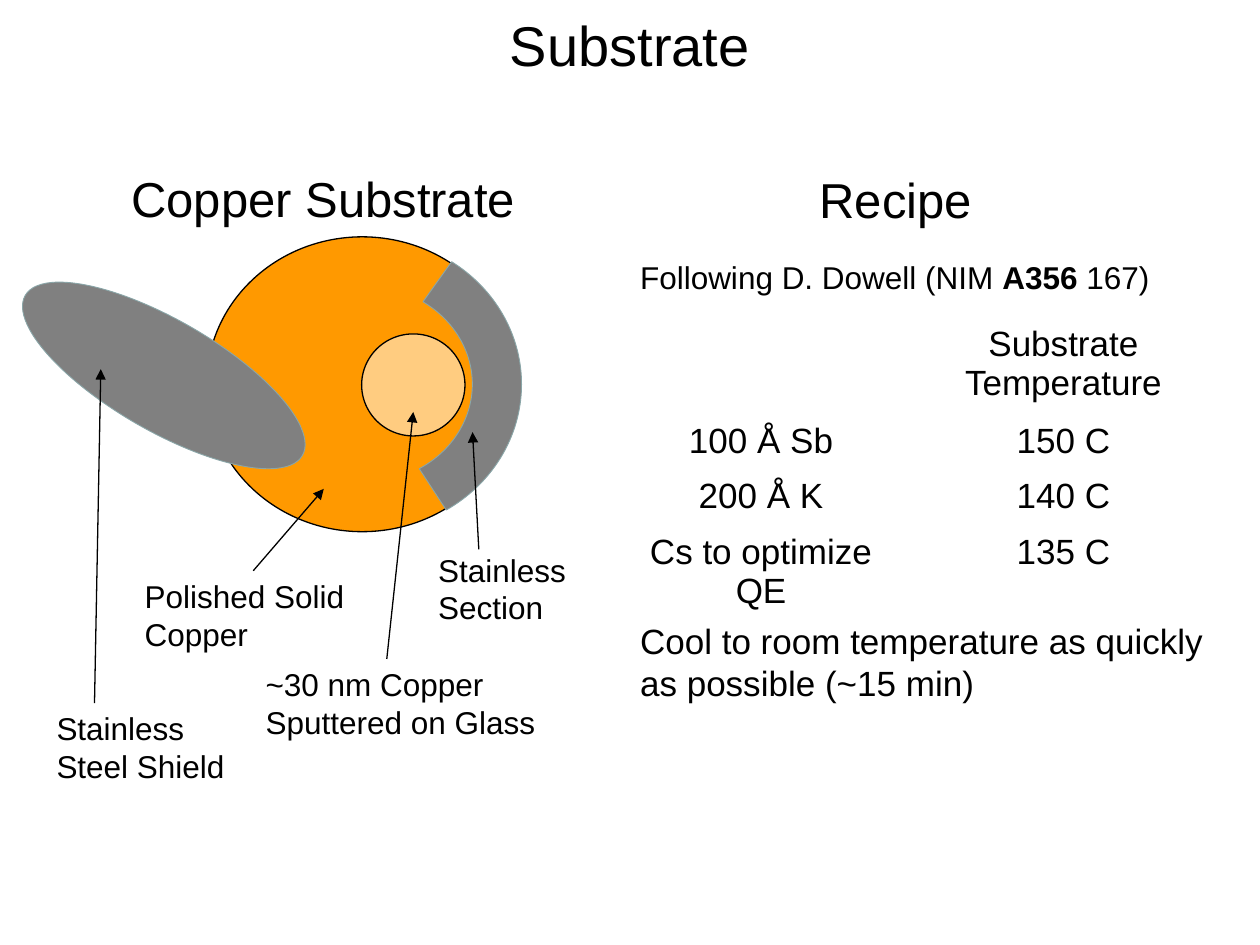
import pptx
import pptx.dml.color
import pptx.enum.shapes
import pptx.enum.text
import pptx.oxml
import pptx.oxml.ns
import pptx.util
from pptx.util import Inches

RGBColor = pptx.dml.color.RGBColor
Shape = pptx.enum.shapes.MSO_SHAPE
Align = pptx.enum.text.PP_ALIGN
Anchor = pptx.enum.text.MSO_ANCHOR

BLACK = RGBColor(0x00, 0x00, 0x00)
WHITE = RGBColor(0xFF, 0xFF, 0xFF)
COPPER = RGBColor(0xFF, 0x99, 0x00)
STEEL = RGBColor(0x80, 0x80, 0x80)
STEEL_EDGE = RGBColor(0x8A, 0xA6, 0xA8)

LABELS = [
    ("Polished Solid Copper", 1.05, 4.53, 1.82),
    ("~30 nm Copper Sputtered on Glass", 2.01, 5.23, 2.46),
    ("Stainless Steel Shield", 0.35, 5.58, 1.82),
    ("Stainless Section", 3.38, 4.32, 1.46),
]
POINTERS = [
    (2.01, 4.53, 2.57, 3.88),
    (3.07, 5.23, 3.28, 3.27),
    (0.75, 5.58, 0.8, 2.93),
    (3.8, 4.36, 3.75, 3.43),
]
RECIPE = [
    ("", "Substrate Temperature"),
    ("100 Å Sb", "150 C"),
    ("200 Å K", "140 C"),
    ("Cs to optimize QE", "135 C"),
]
ROW_HEIGHTS = [0.76, 0.44, 0.44, 0.76]


def format_runs(paragraph, size):
    for run in paragraph.runs:
        run.font.name = "Arial"
        run.font.size = pptx.util.Pt(size)
        run.font.color.rgb = BLACK


def add_text(slide, text, left, top, width, height, size, align=Align.LEFT):
    box = slide.shapes.add_textbox(
        Inches(left), Inches(top), Inches(width), Inches(height))
    frame = box.text_frame
    frame.word_wrap = True
    frame.text = text
    frame.paragraphs[0].alignment = align
    format_runs(frame.paragraphs[0], size)
    return frame


def add_heading(slide, text, left, top, width, height):
    frame = add_text(slide, text, left, top, width, height, 28, Align.CENTER)
    frame.paragraphs[0].line_spacing = 0.9


def add_part(slide, kind, left, top, width, height, fill, edge, edge_width):
    part = slide.shapes.add_shape(
        kind, Inches(left), Inches(top), Inches(width), Inches(height))
    part.shadow.inherit = False
    part.fill.solid()
    part.fill.fore_color.rgb = fill
    part.line.color.rgb = edge
    part.line.width = pptx.util.Pt(edge_width)
    return part


def set_opacity(part, percent):
    color = part.fill._xPr.find(".//" + pptx.oxml.ns.qn("a:srgbClr"))
    color.append(pptx.oxml.parse_xml(
        f'<a:alpha {pptx.oxml.ns.nsdecls("a")} val="{percent * 1000}"/>'))


def add_pointer(slide, start_x, start_y, end_x, end_y):
    pointer = slide.shapes.add_connector(
        pptx.enum.shapes.MSO_CONNECTOR.STRAIGHT,
        Inches(start_x), Inches(start_y), Inches(end_x), Inches(end_y))
    pointer.line.color.rgb = BLACK
    pointer.line.width = pptx.util.Pt(0.75)
    namespace = pptx.oxml.ns.nsdecls("a")
    pointer.line._get_or_add_ln().append(
        pptx.oxml.parse_xml(f'<a:tailEnd {namespace} type="triangle"/>'))
    pointer._element.spPr.append(
        pptx.oxml.parse_xml(f'<a:effectLst {namespace}/>'))


def add_sample(slide):
    add_part(slide, Shape.OVAL, 1.64, 1.88, 2.47, 2.34, COPPER, BLACK, 0.75)
    glass = add_part(
        slide, Shape.OVAL, 2.87, 2.65, 0.82, 0.81, WHITE, BLACK, 0.75)
    set_opacity(glass, 50)
    shield = add_part(
        slide, Shape.OVAL, 0.03, 2.54, 2.54, 0.88, STEEL, STEEL_EDGE, 0.5)
    shield.rotation = 30
    section = add_part(
        slide, Shape.BLOCK_ARC, 1.64, 1.88, 2.5, 2.34, STEEL, STEEL_EDGE, 0.5)
    start_angle, end_angle, thickness = 305.56, 56.84, 0.167
    section.adjustments[0] = start_angle * 0.6
    section.adjustments[1] = end_angle * 0.6
    section.adjustments[2] = thickness


def add_instructions(slide):
    frame = add_text(slide, "", 5.08, 2.05, 4.49, 2.19, 18)
    frame.margin_left = frame.margin_right = 0
    frame.margin_top = frame.margin_bottom = 0
    reference = frame.paragraphs[0]
    for text, bold in [("Following D. Dowell (NIM ", False),
                       ("A356", True), (" 167)", False)]:
        run = reference.add_run()
        run.text = text
        run.font.bold = bold
    format_runs(reference, 18)
    cooling = frame.add_paragraph()
    cooling.text = "Cool to room temperature as quickly as possible (~15 min)"
    cooling.space_before = pptx.util.Pt(185)
    format_runs(cooling, 20)


def add_recipe_table(slide):
    table = slide.shapes.add_table(
        len(RECIPE), 2, Inches(4.84), Inches(2.53),
        Inches(4.8), Inches(sum(ROW_HEIGHTS))).table
    for row, height, texts in zip(table.rows, ROW_HEIGHTS, RECIPE):
        row.height = Inches(height)
        for cell, text in zip(row.cells, texts):
            cell.fill.solid()
            cell.fill.fore_color.rgb = WHITE
            cell.text_frame.text = text
            paragraph = cell.text_frame.paragraphs[0]
            paragraph.alignment = Align.CENTER
            format_runs(paragraph, 20)
            for run in paragraph.runs:
                run.font.bold = False


def main():
    presentation = pptx.Presentation()
    presentation.slide_width = Inches(10)
    presentation.slide_height = Inches(7.5)
    slide = presentation.slides.add_slide(presentation.slide_layouts[6])

    title = add_text(
        slide, "Substrate", 0.75, 0, 8.5, 0.7, 32, Align.CENTER)
    title.vertical_anchor = Anchor.MIDDLE
    add_heading(slide, "Copper Substrate", 0.67, 1.34, 3.79, 0.6)
    add_heading(slide, "Recipe", 5.86, 1.35, 2.5, 0.57)
    add_sample(slide)
    for pointer in POINTERS:
        add_pointer(slide, *pointer)
    for text, left, top, width in LABELS:
        add_text(slide, text, left, top, width, 0.71, 18)
    add_instructions(slide)
    add_recipe_table(slide)

    presentation.save("out.pptx")


if __name__ == "__main__":
    main()
